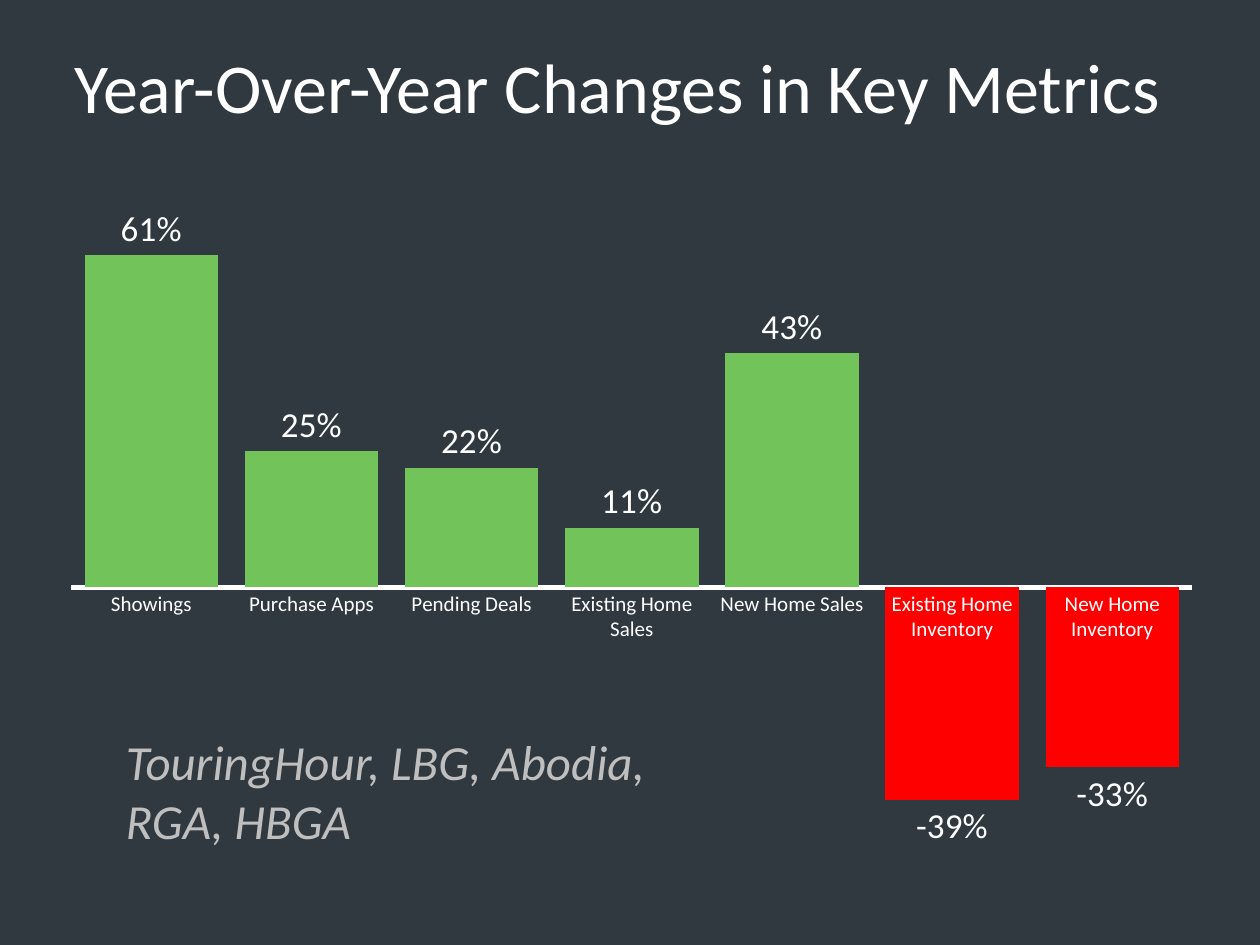
from lxml.etree import SubElement
from pptx import Presentation
from pptx.chart.data import CategoryChartData
from pptx.dml.color import RGBColor
from pptx.enum.chart import XL_CHART_TYPE, XL_LABEL_POSITION, XL_TICK_MARK
from pptx.enum.text import MSO_AUTO_SIZE
from pptx.oxml.ns import qn
from pptx.util import Pt

FONT = "Calibri"
COLORS = {
    "background": "2F393F",
    "text": "FFFFFF",
    "source": "BFBFBF",
    "rise": "72C45A",
    "fall": "FF0000",
}
METRICS = {
    "Showings": 0.61,
    "Purchase Apps": 0.25,
    "Pending Deals": 0.22,
    "Existing Home Sales": 0.11,
    "New Home Sales": 0.43,
    "Existing Home Inventory": -0.39,
    "New Home Inventory": -0.33,
}


def color(name):
    return RGBColor.from_string(COLORS[name])


def paint(fill, name):
    fill.solid()
    fill.fore_color.rgb = color(name)


def style_font(font, size, color_name, italic=False):
    font.name = FONT
    font.size = Pt(size)
    font.italic = italic
    font.color.rgb = color(color_name)


def add_text(slide, text, box, size, color_name, wrap=True, italic=False):
    shape = slide.shapes.add_textbox(*map(Pt, box))
    frame = shape.text_frame
    frame.word_wrap = wrap
    frame.auto_size = MSO_AUTO_SIZE.SHAPE_TO_FIT_TEXT
    run = frame.paragraphs[0].add_run()
    run.text = text
    style_font(run.font, size, color_name, italic)


def set_plot_layout(chart, x, y, width, height):
    """Place the inner plot area, in fractions of the chart."""
    plot_area = chart._chartSpace.chart.plotArea
    for old_layout in plot_area.findall(qn("c:layout")):
        plot_area.remove(old_layout)
    layout = SubElement(plot_area, qn("c:layout"))
    plot_area.insert(0, layout)
    manual = SubElement(layout, qn("c:manualLayout"))
    settings = {
        "layoutTarget": "inner", "xMode": "edge", "yMode": "edge",
        "x": x, "y": y, "w": width, "h": height,
    }
    for tag, value in settings.items():
        SubElement(manual, qn(f"c:{tag}")).set("val", str(value))


def style_axes(chart):
    category_axis = chart.category_axis
    category_axis.major_tick_mark = XL_TICK_MARK.NONE
    category_axis.has_major_gridlines = False
    category_axis.format.line.width = Pt(3)
    category_axis.format.line.color.rgb = color("text")
    style_font(category_axis.tick_labels.font, 12, "text")

    value_axis = chart.value_axis
    value_axis.minimum_scale = -0.6
    value_axis.maximum_scale = 0.8
    value_axis.has_major_gridlines = False
    value_axis.visible = False


def style_columns(plot):
    plot.gap_width = 20
    plot.overlap = -27
    plot.vary_by_categories = False
    series = plot.series[0]
    series.invert_if_negative = False
    paint(series.format.fill, "rise")
    for index, value in enumerate(METRICS.values()):
        if value < 0:
            paint(series.points[index].format.fill, "fall")

    labels = series.data_labels
    labels.show_value = True
    labels.position = XL_LABEL_POSITION.OUTSIDE_END
    labels.number_format = "0%"
    labels.number_format_is_linked = False
    style_font(labels.font, 20, "text")


def add_metrics_chart(slide, box):
    data = CategoryChartData(number_format="0%")
    data.categories = METRICS.keys()
    data.add_series("Series 1", METRICS.values())
    chart = slide.shapes.add_chart(
        XL_CHART_TYPE.COLUMN_CLUSTERED, *map(Pt, box), data
    ).chart
    chart.has_title = False
    chart.has_legend = False
    style_font(chart.font, 10, "text")
    style_axes(chart)
    style_columns(chart.plots[0])
    set_plot_layout(chart, 0.02, 0.02, 0.96, 0.96)


def main():
    presentation = Presentation()
    presentation.slide_width = Pt(720)
    presentation.slide_height = Pt(540)
    slide = presentation.slides.add_slide(presentation.slide_layouts[6])
    paint(slide.background.fill, "background")

    add_metrics_chart(slide, (27.4, 77.8, 667.4, 453.6))
    add_text(slide, "Year-Over-Year Changes in Key Metrics",
             (35.3, 21.6, 645.8, 55.4), 40, "text", wrap=False)
    add_text(slide, "TouringHour, LBG, Abodia, RGA, HBGA",
             (64.8, 414.7, 318.2, 74.9), 28, "source", italic=True)
    presentation.save("out.pptx")


if __name__ == "__main__":
    main()
